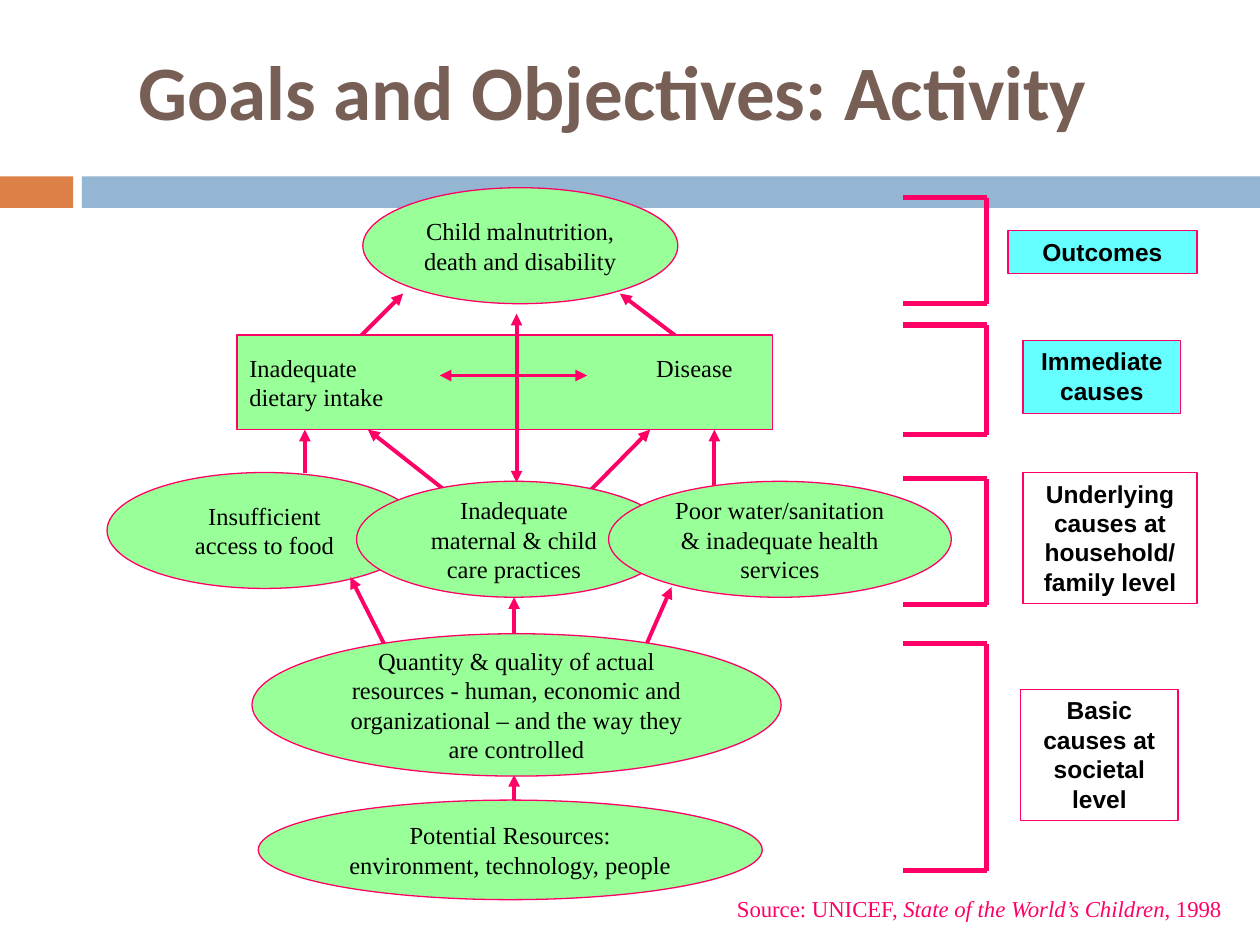
from lxml import etree
from pptx import Presentation
from pptx.dml.color import RGBColor
from pptx.enum.shapes import MSO_CONNECTOR, MSO_SHAPE
from pptx.enum.text import MSO_ANCHOR, PP_ALIGN
from pptx.oxml.ns import qn
from pptx.util import Inches, Pt

RECTANGLE, OVAL = MSO_SHAPE.RECTANGLE, MSO_SHAPE.OVAL
STRAIGHT = MSO_CONNECTOR.STRAIGHT
TOP, MIDDLE = MSO_ANCHOR.TOP, MSO_ANCHOR.MIDDLE
LEFT, CENTER = PP_ALIGN.LEFT, PP_ALIGN.CENTER

ORANGE = RGBColor(0xDD, 0x80, 0x47)
BLUE = RGBColor(0x94, 0xB6, 0xD2)
BROWN = RGBColor(0x77, 0x5F, 0x55)
PINK = RGBColor(0xFF, 0x00, 0x66)
GREEN = RGBColor(0x99, 0xFF, 0x99)
CYAN = RGBColor(0x66, 0xFF, 0xFF)
WHITE = RGBColor(0xFF, 0xFF, 0xFF)
BLACK = RGBColor(0x00, 0x00, 0x00)

presentation = Presentation()
presentation.slide_width, presentation.slide_height = Inches(10), Inches(7.5)
slide = presentation.slides.add_slide(presentation.slide_layouts[6])


def add_box(kind, box, fill, text, font_name="Times New Roman", bold=False,
            anchor=MIDDLE, align=CENTER, wrap=True):
    shape = slide.shapes.add_shape(kind, *map(Inches, box))
    shape.shadow.inherit = False
    shape.fill.solid()
    shape.fill.fore_color.rgb = fill
    shape.line.color.rgb = PINK
    shape.line.width = Pt(0.75)
    text_frame = shape.text_frame
    text_frame.word_wrap = wrap
    text_frame.vertical_anchor = anchor
    text_frame.text = text
    for paragraph in text_frame.paragraphs:
        paragraph.alignment = align
        for run in paragraph.runs:
            run.font.name, run.font.size = font_name, Pt(14)
            run.font.bold, run.font.color.rgb = bold, BLACK
    return shape


def add_line(start, end, width=2.25, arrow_ends=("tailEnd",)):
    """Draw a pink line; arrow_ends holds headEnd (at start) and tailEnd (at end)."""
    connector = slide.shapes.add_connector(STRAIGHT, *map(Inches, start + end))
    connector.line.color.rgb = PINK
    connector.line.width = Pt(width)
    line = connector.line._get_or_add_ln()
    for arrow_end in arrow_ends:
        etree.SubElement(line, qn(f"a:{arrow_end}"), type="triangle")
    etree.SubElement(connector._element.spPr, qn("a:effectLst"))


# Band under the title
for left, width, color in [(0, 0.58, ORANGE), (0.65, 9.35, BLUE)]:
    band = slide.shapes.add_shape(RECTANGLE, Inches(left), Inches(1.4),
                                  Inches(width), Inches(0.25))
    band.shadow.inherit = False
    band.fill.solid()
    band.fill.fore_color.rgb = color
    band.line.fill.background()

# Title
title = slide.shapes.add_textbox(Inches(1), Inches(0.41), Inches(8.42), Inches(0.6))
title.text_frame.word_wrap = True
title.text_frame.vertical_anchor = MIDDLE
title.text_frame.text = "Goals and Objectives: Activity"
title_font = title.text_frame.paragraphs[0].runs[0].font
title_font.name, title_font.size, title_font.bold = "Calibri", Pt(44), True
title_font.color.rgb = BROWN

# Source line
source = slide.shapes.add_textbox(Inches(5.75), Inches(7.05), Inches(4.25), Inches(0.32))
source.text_frame.word_wrap = True
source_paragraph = source.text_frame.paragraphs[0]
for text, italic in [("Source: UNICEF, ", False),
                     ("State of the World’s Children", True),
                     (", 1998", False)]:
    run = source_paragraph.add_run()
    run.text = text
    run.font.name, run.font.size = "Times New Roman", Pt(13)
    run.font.italic, run.font.color.rgb = italic, PINK

# Brackets and level labels
BRACKET_LEFT, BRACKET_RIGHT = 7.17, 7.83
levels = [
    (1.57, 2.41, (8, 1.83, 1.5, 0.34), CYAN, "Outcomes"),
    (2.58, 3.45, (8.12, 2.7, 1.25, 0.58), CYAN, "Immediate causes"),
    (3.8, 4.8, (8.12, 3.75, 1.38, 1.04), WHITE,
     "Underlying causes at household/ family level"),
    (5.11, 6.91, (8.1, 5.47, 1.25, 1.04), WHITE, "Basic causes at societal level"),
]
for top, bottom, box, fill, label in levels:
    for y in (top, bottom):
        add_line((BRACKET_LEFT, y), (BRACKET_RIGHT, y), 3, ())
    add_line((BRACKET_RIGHT, top), (BRACKET_RIGHT, bottom), 3, ())
    add_box(RECTANGLE, box, fill, label, "Arial", bold=True, anchor=TOP)

# Causes: arrows lie over the first oval and under the others
add_box(OVAL, (0.85, 3.75, 2.5, 0.92), GREEN, "Insufficient\naccess to food", wrap=False)

for start, end in [
    ((4.08, 6.65), (4.08, 6.15)),
    ((3.16, 5.33), (2.78, 4.58)),
    ((4.08, 5.25), (4.08, 4.74)),
    ((5, 5.41), (5.33, 4.66)),
    ((2.42, 3.75), (2.42, 3.41)),
    ((3.72, 4.04), (2.92, 3.41)),
    ((4.55, 4.03), (5.16, 3.41)),
    ((5.67, 4.05), (5.67, 3.41)),
    ((2.7, 2.83), (3.2, 2.33)),
    ((5.58, 2.83), (4.92, 2.33)),
]:
    add_line(start, end)

add_box(OVAL, (2.05, 6.35, 4, 0.79), GREEN,
        "Potential Resources: environment, technology, people")
add_box(OVAL, (2, 5.03, 4.2, 1.13), GREEN,
        "Quantity & quality of actual resources - human, economic and "
        "organizational – and the way they are controlled")
add_box(OVAL, (2.83, 3.82, 2.5, 0.92), GREEN,
        "Inadequate\nmaternal & child\ncare practices", wrap=False)
add_box(OVAL, (4.83, 3.82, 2.72, 0.92), GREEN,
        "Poor water/sanitation & inadequate health services")
add_box(OVAL, (2.88, 1.49, 2.5, 0.92), GREEN, "Child malnutrition, death and disability")

immediate = add_box(RECTANGLE, (1.88, 2.66, 4.25, 0.75), GREEN,
                    "Inadequate\tDisease\ndietary intake", align=LEFT)
properties = immediate.text_frame.paragraphs[0]._p.get_or_add_pPr()
tab_list = etree.SubElement(properties, qn("a:tabLst"))
etree.SubElement(tab_list, qn("a:tab"), pos=str(Inches(3.23)), algn="l")

for start, end in [((4.1, 3.83), (4.1, 2.49)), ((3.49, 2.98), (4.66, 2.98))]:
    add_line(start, end, arrow_ends=("headEnd", "tailEnd"))

presentation.save("out.pptx")
